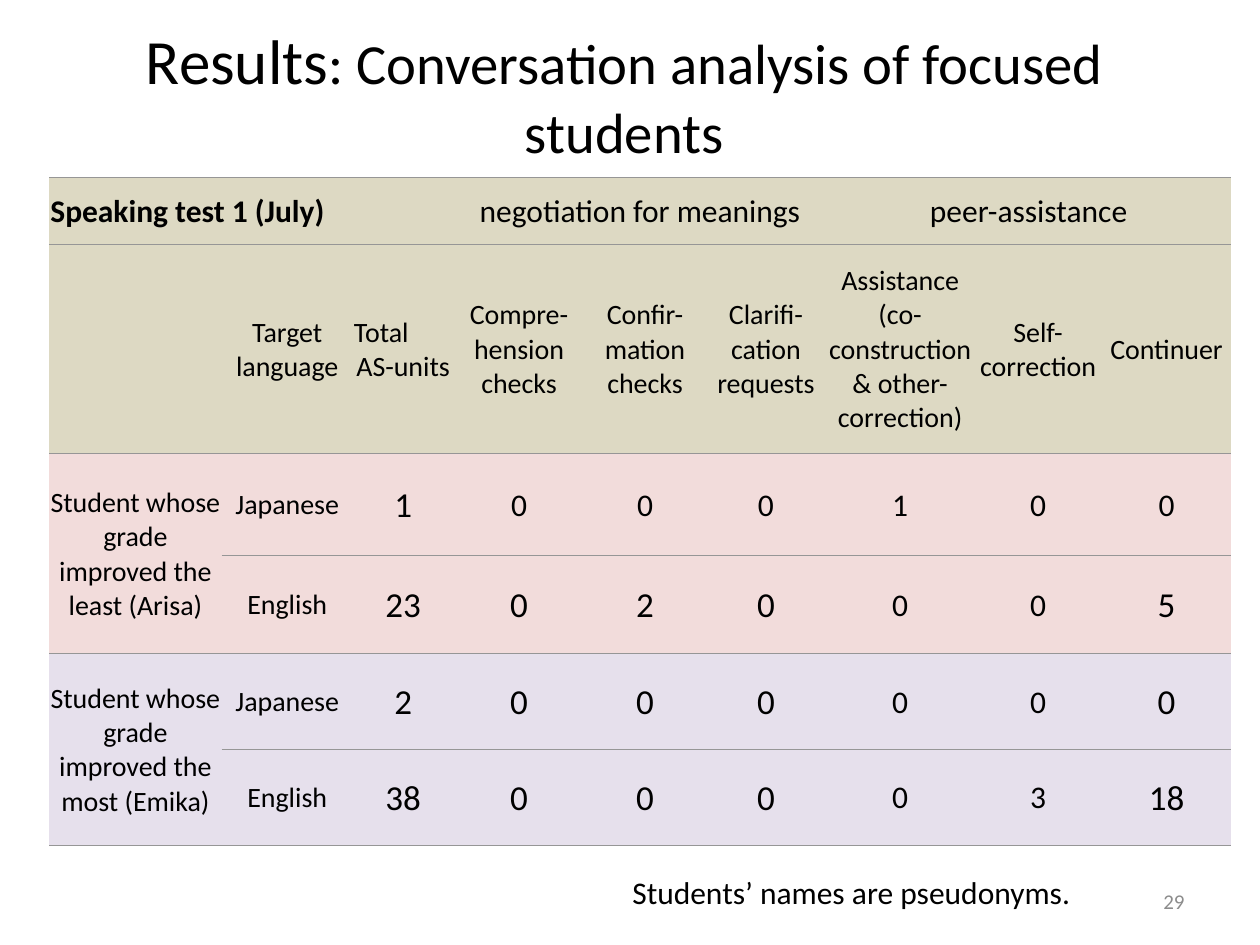
from lxml.etree import SubElement
from pptx import Presentation
from pptx.dml.color import RGBColor
from pptx.enum.text import MSO_ANCHOR, PP_ALIGN
from pptx.oxml.ns import qn
from pptx.util import Inches, Pt

FONT = "Calibri"
BLACK, GREY, RULE = "000000", "8C8C8C", "969696"
HEADER, LEAST, MOST = "DDD9C3", "F2DCDB", "E6E0EC"
NO_STYLE_NO_GRID = "{2D5ABB26-0587-4C30-8999-92F81FD0307C}"

COLUMN_WIDTHS = [1.37, 1.04, 0.8, 1.04, 0.96, 0.96, 1.17, 1.02, 1.02]
ROW_HEIGHTS = [0.53, 1.66, 0.81, 0.78, 0.76, 0.76]
ROW_FILLS = [HEADER, HEADER, LEAST, LEAST, MOST, MOST]
GROUPS = ["Speaking test 1 (July)", "negotiation for meanings", "peer-assistance"]
HEADINGS = [
    "Target language", "Total\nAS-units", "Compre-hension checks",
    "Confir-mation checks", "Clarifi-cation requests",
    "Assistance (co-construction & other-correction)",
    "Self-correction", "Continuer",
]
STUDENTS = [
    "Student whose grade improved the least (Arisa)",
    "Student whose grade improved the most (Emika)",
]
# Language, counts and the text size of each count
RESULTS = [
    ("Japanese", [1, 0, 0, 0, 1, 0, 0], [20, 18, 18, 18, 18, 18, 18]),
    ("English", [23, 0, 2, 0, 0, 0, 5], [20, 20, 20, 20, 18, 18, 20]),
    ("Japanese", [2, 0, 0, 0, 0, 0, 0], [20, 20, 20, 20, 18, 18, 20]),
    ("English", [38, 0, 0, 0, 0, 3, 18], [20, 20, 20, 20, 18, 18, 20]),
]


def color(hex_string):
    return RGBColor.from_string(hex_string)


def format_font(font, size, hex_string=BLACK, bold=False):
    font.name = FONT
    font.size = Pt(size)
    font.bold = bold
    font.color.rgb = color(hex_string)


def add_text(slide, box, parts, alignment, anchor=MSO_ANCHOR.MIDDLE,
             hex_string=BLACK, wrap=True):
    """Add a one-paragraph text box; parts are (text, size) pairs."""
    shape = slide.shapes.add_textbox(*map(Inches, box))
    text_frame = shape.text_frame
    text_frame.word_wrap = wrap
    text_frame.vertical_anchor = anchor
    paragraph = text_frame.paragraphs[0]
    paragraph.alignment = alignment
    for text, size in parts:
        run = paragraph.add_run()
        run.text = text
        format_font(run.font, size, hex_string)


def add_rules(cell):
    """Draw thin lines along the top and bottom of a cell."""
    properties = cell._tc.get_or_add_tcPr()
    for tag in ("a:lnT", "a:lnB"):
        line = SubElement(properties, qn(tag), w=str(Pt(0.5)))
        fill = SubElement(line, qn("a:solidFill"))
        SubElement(fill, qn("a:srgbClr"), val=RULE)


def style_cell(cell, fill):
    add_rules(cell)
    cell.fill.solid()
    cell.fill.fore_color.rgb = color(fill)
    cell.vertical_anchor = MSO_ANCHOR.MIDDLE
    cell.margin_left = cell.margin_right = cell.margin_top = Inches(0.01)
    cell.margin_bottom = 0


def write_cell(cell, text, size, bold=False, alignment=PP_ALIGN.CENTER):
    cell.text_frame.text = text
    for paragraph in cell.text_frame.paragraphs:
        paragraph.alignment = alignment
        for run in paragraph.runs:
            format_font(run.font, size, bold=bold)


def fill_header(table):
    for index, text in enumerate(GROUPS):
        first = index == 0
        cell = table.cell(0, index * 3)
        cell.merge(table.cell(0, index * 3 + 2))
        write_cell(cell, text, 18, bold=first,
                   alignment=PP_ALIGN.LEFT if first else PP_ALIGN.CENTER)
    for column, text in enumerate(HEADINGS, start=1):
        write_cell(table.cell(1, column), text, 16)
    total_cell = table.cell(1, 2)
    total_cell.text_frame.paragraphs[0].alignment = PP_ALIGN.LEFT


def fill_results(table):
    for index, text in enumerate(STUDENTS):
        cell = table.cell(2 + index * 2, 0)
        cell.merge(table.cell(3 + index * 2, 0))
        write_cell(cell, text, 16)
    for row, (language, counts, sizes) in enumerate(RESULTS, start=2):
        write_cell(table.cell(row, 1), language, 16)
        for column, (count, size) in enumerate(zip(counts, sizes), start=2):
            write_cell(table.cell(row, column), str(count), size)


def add_results_table(slide, box):
    frame = slide.shapes.add_table(
        len(ROW_HEIGHTS), len(COLUMN_WIDTHS), *map(Inches, box))
    table = frame.table
    table.first_row = table.horz_banding = False
    table._tbl.tblPr.find(qn("a:tableStyleId")).text = NO_STYLE_NO_GRID
    for column, width in zip(table.columns, COLUMN_WIDTHS):
        column.width = Inches(width)
    for row, height, fill in zip(table.rows, ROW_HEIGHTS, ROW_FILLS):
        row.height = Inches(height)
        for cell in row.cells:
            style_cell(cell, fill)
    fill_header(table)
    fill_results(table)


def add_title(slide, box):
    parts = [("Results", 36), (": Conversation analysis of focused students", 32.4)]
    add_text(slide, box, parts, PP_ALIGN.CENTER)


def add_footer(slide, note_box, number_box):
    add_text(slide, note_box, [("Students’ names are pseudonyms.", 18)],
             PP_ALIGN.LEFT, MSO_ANCHOR.TOP, wrap=False)
    add_text(slide, number_box, [("29", 12)], PP_ALIGN.RIGHT, hex_string=GREY)


def main():
    presentation = Presentation()
    presentation.slide_width = Inches(10)
    presentation.slide_height = Inches(7.5)
    slide = presentation.slides.add_slide(presentation.slide_layouts[6])
    add_title(slide, (0.23, 0.31, 9.45, 0.86))
    add_results_table(slide, (0.39, 1.41, 9.38, 5.3))
    add_footer(slide, (4.92, 6.88, 3.78, 0.4), (7.17, 6.95, 2.33, 0.4))
    presentation.save("out.pptx")


if __name__ == "__main__":
    main()
